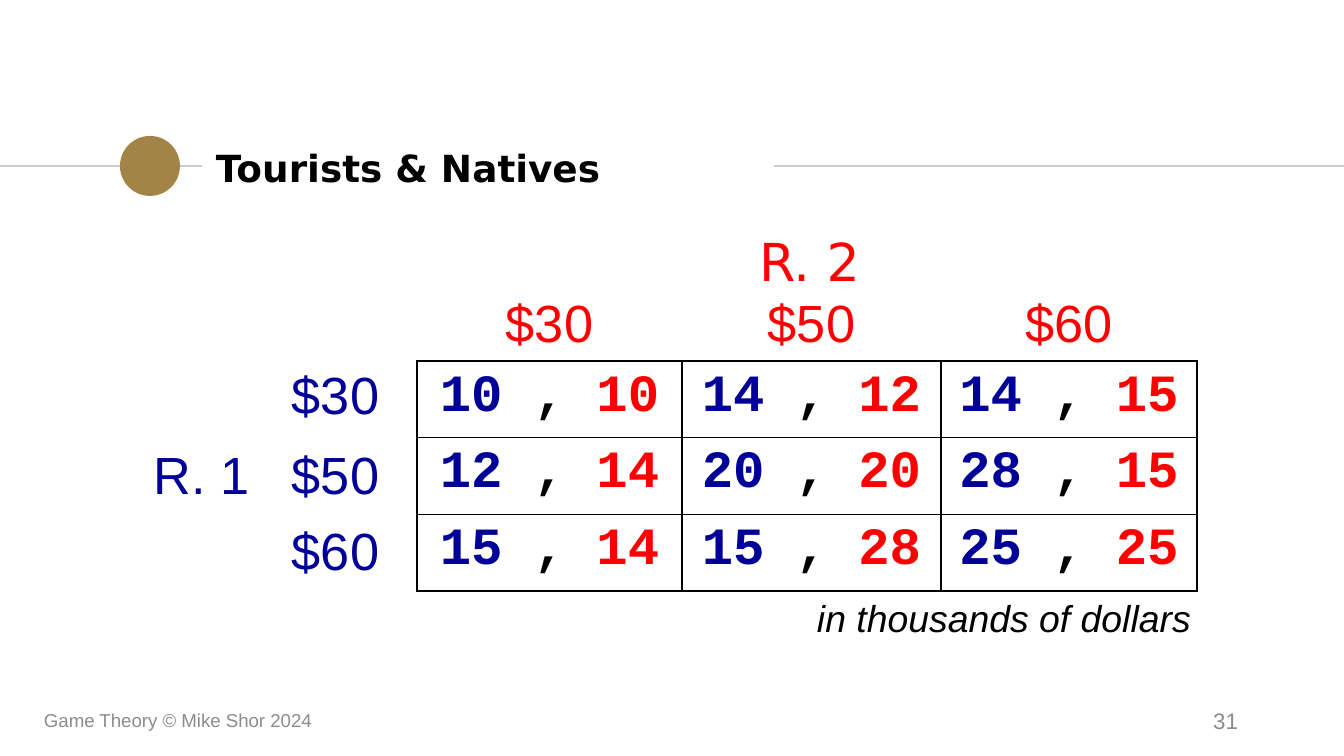
from lxml import etree
from pptx import Presentation
from pptx.dml.color import RGBColor
from pptx.enum.shapes import MSO_CONNECTOR, MSO_SHAPE
from pptx.enum.text import MSO_ANCHOR, PP_ALIGN
from pptx.oxml.ns import qn
from pptx.util import Emu, Pt

LEFT, CENTER, RIGHT = PP_ALIGN.LEFT, PP_ALIGN.CENTER, PP_ALIGN.RIGHT
TOP, MIDDLE, BOTTOM = MSO_ANCHOR.TOP, MSO_ANCHOR.MIDDLE, MSO_ANCHOR.BOTTOM
STRAIGHT, OVAL = MSO_CONNECTOR.STRAIGHT, MSO_SHAPE.OVAL

WIDTH, HEIGHT = 1344, 756
EMU_PER_PX = 9144000 / WIDTH
BLACK, RED, NAVY, GRAY = "000000", "FF0000", "000099", "8C8C8C"
RULE, GOLD = "CCCCCC", "A28448"
SANS, MONO, HEADING = "Arial", "Courier New", "DejaVu Sans"

PRICES = ["$30", "$50", "$60"]
PAYOFFS = [
    [("10", "10"), ("14", "12"), ("14", "15")],
    [("12", "14"), ("20", "20"), ("28", "15")],
    [("15", "14"), ("15", "28"), ("25", "25")],
]
COLUMNS = [138, 138, 265, 259, 256]
ROW_HEIGHT = 76


def px(n):
    return Emu(round(n * EMU_PER_PX))


def rgb(value):
    return RGBColor.from_string(value)


class SlideBuilder:
    def __init__(self, slide):
        self.s = slide

    def line(self, x1, x2, y):
        sp = self.s.shapes.add_connector(STRAIGHT, px(x1), px(y), px(x2), px(y))
        sp.line.color.rgb = rgb(RULE)
        sp.line.width = Pt(0.75)
        etree.SubElement(sp._element.spPr, qn("a:effectLst"))

    def dot(self, x, y, size):
        sp = self.s.shapes.add_shape(OVAL, px(x), px(y), px(size), px(size))
        sp.shadow.inherit = False
        sp.fill.solid()
        sp.fill.fore_color.rgb = rgb(GOLD)
        sp.line.fill.background()

    def runs(self, tf, parts, size, font=SANS, bold=False, italic=False,
             align=LEFT, before=0):
        """Fill the first paragraph with (text, colour) parts."""
        p = tf.paragraphs[0]
        p.alignment = align
        p.space_before = Pt(before)
        for text, color in parts:
            r = p.add_run()
            r.text = text
            r.font.size, r.font.name = Pt(size), font
            r.font.bold, r.font.italic = bold, italic
            r.font.color.rgb = rgb(color)

    def text(self, box, text, size, color=BLACK, anchor=TOP, inset=7, **style):
        tf = self.s.shapes.add_textbox(*map(px, box)).text_frame
        tf.word_wrap = True
        tf.vertical_anchor = anchor
        tf.margin_left = tf.margin_right = px(13)
        tf.margin_top = tf.margin_bottom = px(inset)
        self.runs(tf, [(text, color)], size, **style)

    def table(self, x, y, columns, row_count):
        frame = self.s.shapes.add_table(row_count, len(columns), px(x), px(y),
                                        px(sum(columns)), px(ROW_HEIGHT * row_count))
        table = frame.table
        table.first_row = table.horz_banding = False
        for column, width in zip(table.columns, columns):
            column.width = px(width)
        for row in table.rows:
            row.height = px(ROW_HEIGHT)
        return table

    def cell(self, cell, parts=(), edges="", anchor=TOP, **style):
        """Set text and the black borders named by edges, out of LRTB."""
        tcPr = cell._tc.get_or_add_tcPr()
        for side in "LRTB":
            ln = etree.SubElement(tcPr, qn(f"a:ln{side}"), w=str(Pt(1)))
            if side in edges:
                fill = etree.SubElement(ln, qn("a:solidFill"))
                etree.SubElement(fill, qn("a:srgbClr"), val=BLACK)
            else:
                etree.SubElement(ln, qn("a:noFill"))
        cell.fill.background()
        cell.vertical_anchor = anchor
        cell.margin_left = cell.margin_right = px(13)
        cell.margin_top = cell.margin_bottom = px(7)
        self.runs(cell.text_frame, parts, 28, before=5.6, **style)

    def payoff_matrix(self, x, y):
        table = self.table(x, y, COLUMNS, len(PRICES) + 1)
        for col in range(2):
            self.cell(table.cell(0, col))
        for col, price in enumerate(PRICES, 2):
            self.cell(table.cell(0, col), [(price, RED)], "B", BOTTOM, align=CENTER)
        for row, (price, payoffs) in enumerate(zip(PRICES, PAYOFFS), 1):
            player = [("R. 1", NAVY)] if row == 1 else []
            self.cell(table.cell(row, 0), player, anchor=MIDDLE)
            self.cell(table.cell(row, 1), [(price, NAVY)], "R",
                      TOP if row == 1 else MIDDLE)
            for col, (first, second) in enumerate(payoffs, 2):
                parts = [(first, NAVY), (" , ", BLACK), (second, RED)]
                self.cell(table.cell(row, col), parts, "LRTB",
                          font=MONO, bold=True, align=CENTER)
        table.cell(1, 0).merge(table.cell(len(PRICES), 0))


def main():
    prs = Presentation()
    prs.slide_width, prs.slide_height = px(WIDTH), px(HEIGHT)
    b = SlideBuilder(prs.slides.add_slide(prs.slide_layouts[6]))

    b.line(0, 202, 166)
    b.dot(120, 136, 60)
    b.line(774, WIDTH, 166)
    b.text((203, 136, 570, 64), "Tourists & Natives", 20, anchor=MIDDLE, inset=13,
           font=HEADING, bold=True)

    b.text((949, 700, 302, 41), "31", 12, GRAY, MIDDLE, align=RIGHT)
    b.text((804, 582, 418, 74), "in thousands of dollars", 20, inset=13,
           italic=True, before=6)
    b.payoff_matrix(141, 284)
    b.text((626, 222, 367, 76), "R. 2", 28, RED, font=HEADING, align=CENTER, before=14)
    b.text((31, 700, 454, 41), "Game Theory © Mike Shor 2024", 10, GRAY, MIDDLE)

    prs.save("out.pptx")


if __name__ == "__main__":
    main()
